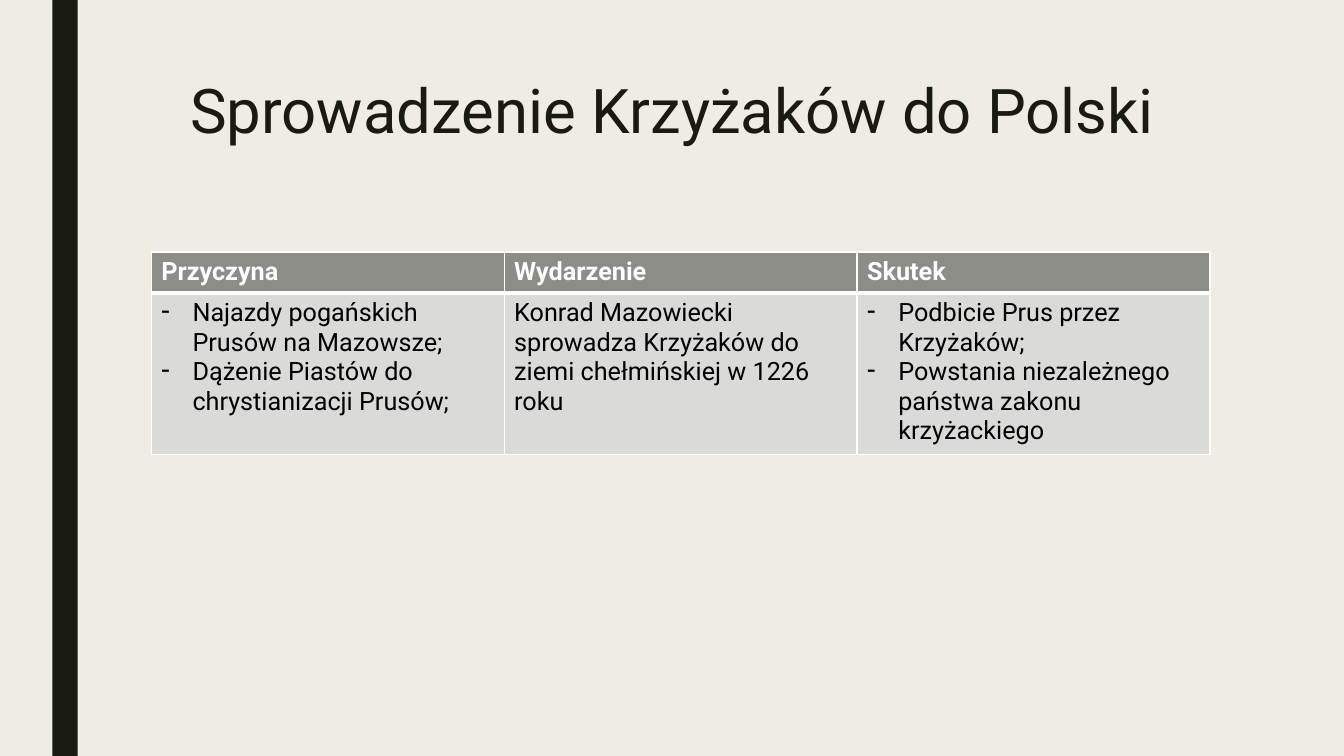
from dataclasses import dataclass

from lxml.etree import SubElement as Sub
from pptx import Presentation
from pptx.dml.color import RGBColor as Rgb
from pptx.enum.shapes import MSO_SHAPE as Shape
from pptx.enum.text import MSO_ANCHOR as Anchor, PP_ALIGN as Align
from pptx.oxml.ns import qn
from pptx.util import Inches, Pt


@dataclass(frozen=True)
class Theme:
    font: str = "Roboto"
    paper: str = "EFEDE3"
    ink: str = "191B0E"
    head: str = "8C8D86"
    body: str = "DADBD9"
    white: str = "FFFFFF"
    black: str = "000000"
    big: int = 44
    small: int = 18


@dataclass(frozen=True)
class Column:
    head: str
    lines: tuple[str, ...]
    dash: bool = False


THEME = Theme()
COLUMNS = (
    Column("Przyczyna", ("Najazdy pogańskich Prusów na Mazowsze;",
                         "Dążenie Piastów do chrystianizacji Prusów;"), True),
    Column("Wydarzenie", ("Konrad Mazowiecki sprowadza Krzyżaków do "
                          "ziemi chełmińskiej w 1226 roku",)),
    Column("Skutek", ("Podbicie Prus przez Krzyżaków;",
                      "Powstania niezależnego państwa zakonu krzyżackiego"), True),
)
LEFT, WIDTH = 1.5, 10.5
ROWS = (0.41, 1.56)


def write(frame, lines: tuple[str, ...], *, size: int, color: str,
          bold: bool = False, dash: bool = False,
          align: Align = Align.LEFT, space: float = 1.0) -> None:
    """Fill a text frame, one paragraph per line."""
    frame.word_wrap = True
    for i, line in enumerate(lines):
        para = frame.paragraphs[0] if i == 0 else frame.add_paragraph()
        para.alignment, para.line_spacing = align, space
        run = para.add_run()
        run.text = line
        font = run.font
        font.name, font.size, font.bold = THEME.font, Pt(size), bold
        font.color.rgb = Rgb.from_string(color)
        if dash:
            props = para._p.get_or_add_pPr()
            props.set("marL", str(Inches(0.31)))
            props.set("indent", str(-Inches(0.31)))
            Sub(props, qn("a:buChar"), char="-")


def paint(cell, color: str, base: int) -> None:
    """Fill a cell and give it white borders; base is the lower width."""
    cell.fill.solid()
    cell.fill.fore_color.rgb = Rgb.from_string(color)
    props = cell._tc.get_or_add_tcPr()
    sides = {"lnL": 1, "lnR": 1, "lnT": 1, "lnB": base}
    for i, (side, width) in enumerate(sides.items()):
        edge = Sub(props, qn(f"a:{side}"), w=str(Pt(width)))
        fill = Sub(edge, qn("a:solidFill"))
        Sub(fill, qn("a:srgbClr"), val=THEME.white)
        props.insert(i, edge)  # borders come before the fill


def draw_table(slide) -> None:
    table = slide.shapes.add_table(
        len(ROWS), len(COLUMNS), Inches(LEFT), Inches(2.5),
        Inches(WIDTH), Inches(sum(ROWS))).table
    for row, height in zip(table.rows, ROWS):
        row.height = Inches(height)
    for i, col in enumerate(COLUMNS):
        table.columns[i].width = Inches(WIDTH / len(COLUMNS))
        head, body = table.cell(0, i), table.cell(1, i)
        paint(head, THEME.head, 3)
        write(head.text_frame, (col.head,), size=THEME.small,
              color=THEME.white, bold=True)
        paint(body, THEME.body, 1)
        write(body.text_frame, col.lines, size=THEME.small,
              color=THEME.black, dash=col.dash)
        if i:  # the heavy rule under the heads is shared by both rows
            continue
    for cell in table.rows[1].cells:
        cell._tc.tcPr.find(qn("a:lnT")).set("w", str(Pt(3)))


def main() -> None:
    deck = Presentation()
    deck.slide_width, deck.slide_height = Inches(13.33), Inches(7.5)
    slide = deck.slides.add_slide(deck.slide_layouts[6])

    # Background and side bar
    back = slide.background.fill
    back.solid()
    back.fore_color.rgb = Rgb.from_string(THEME.paper)
    bar = slide.shapes.add_shape(Shape.RECTANGLE, Inches(0.52), 0,
                                 Inches(0.25), deck.slide_height)
    bar.shadow.inherit = False
    bar.fill.solid()
    bar.fill.fore_color.rgb = Rgb.from_string(THEME.ink)
    bar.line.fill.background()

    # Title
    title = slide.shapes.add_textbox(Inches(LEFT), Inches(0.75),
                                     Inches(WIDTH), Inches(1.62))
    title.text_frame.vertical_anchor = Anchor.TOP
    write(title.text_frame, ("Sprowadzenie Krzyżaków do Polski ",),
          size=THEME.big, color=THEME.ink, align=Align.CENTER, space=0.89)

    # Cause, event and effect
    draw_table(slide)
    deck.save("out.pptx")


if __name__ == "__main__":
    main()
